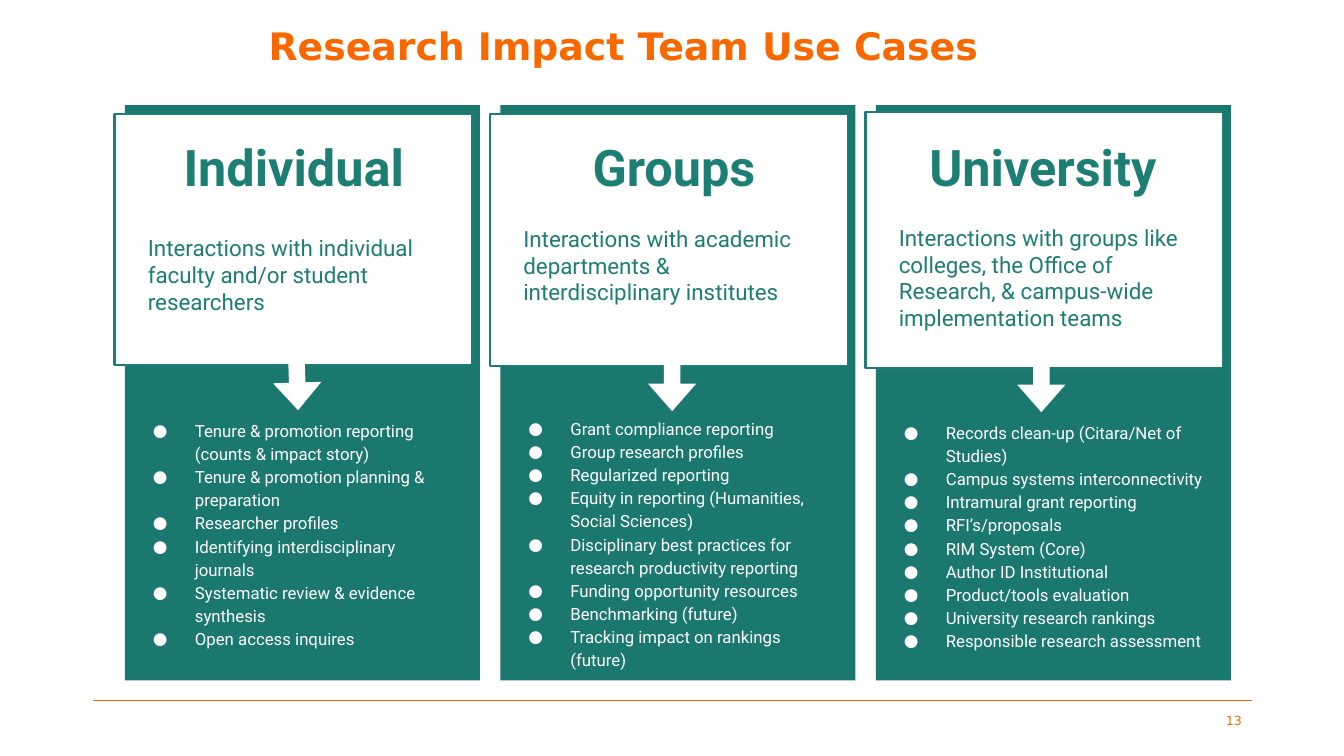
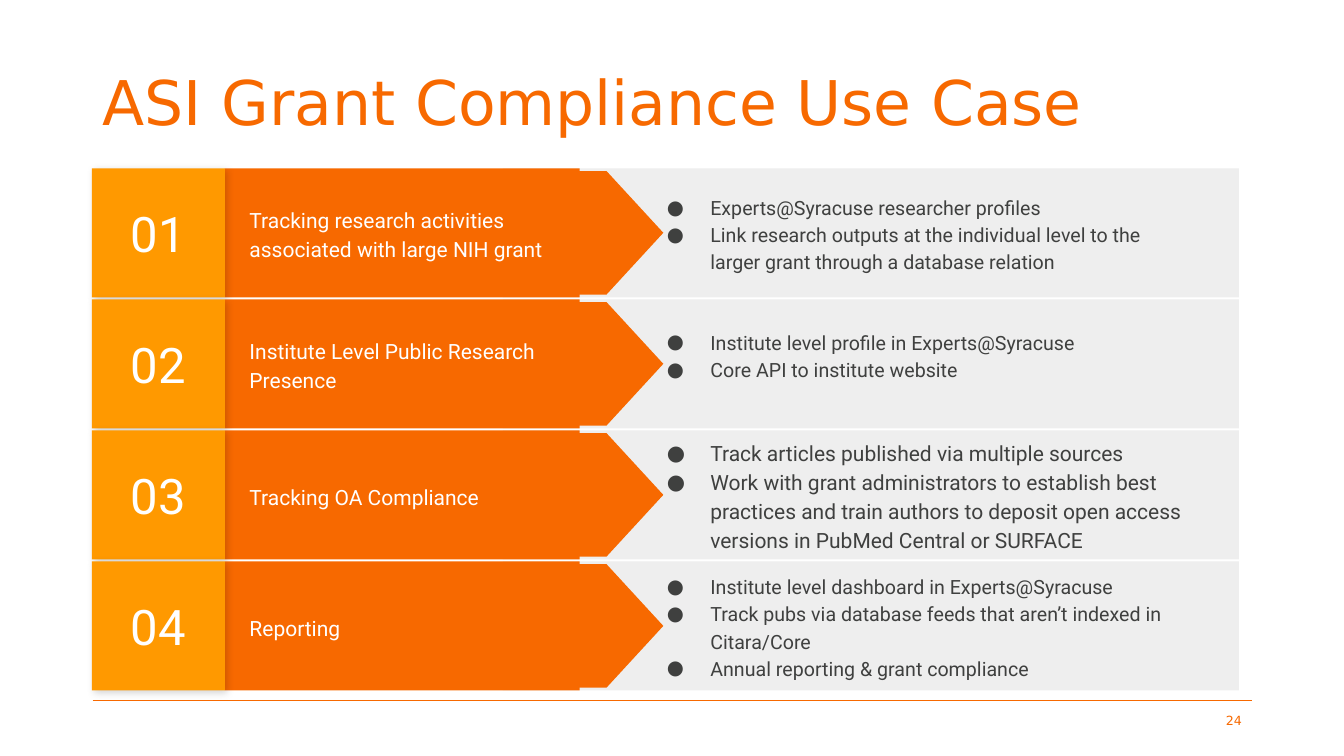
from collections import namedtuple
from dataclasses import dataclass

from lxml.etree import SubElement
from pptx import Presentation
from pptx.dml.color import RGBColor
from pptx.enum.shapes import MSO_CONNECTOR, MSO_SHAPE
from pptx.enum.text import MSO_ANCHOR, MSO_AUTO_SIZE, PP_ALIGN
from pptx.oxml.ns import qn
from pptx.util import Pt


@dataclass(frozen=True)
class Theme:
    orange: str = "F76900"
    amber: str = "FF9900"
    teal: str = "1B786E"
    edge: str = "1D7E74"
    gray: str = "EEEEEE"
    ink: str = "3F403F"
    white: str = "FFFFFF"
    head: str = "DejaVu Sans"
    body: str = "Roboto"
    small: float = 9
    list: float = 12
    item: float = 14
    label: float = 15
    blurb: float = 16
    title: float = 27
    number: float = 35
    name: float = 36
    banner: float = 44


T = Theme()
WIDE, HIGH = 960, 540
LEFT, SPAN, RULE = 66.2, 828, 500.4
EDGE = (7.2, 3.6)

Column = namedtuple("Column", "name mid blurb drop top tall tip tipy turn start items")
COLUMNS = [
    Column("Individual", 120.6,
           "Interactions with individual faculty and/or student researchers",
           157.7, 81.4, 179.2, 123, 273.6, -1.8, 288.7,
           ["Tenure & promotion reporting (counts & impact story)",
            "Tenure & promotion planning & preparation",
            "Researcher profiles",
            "Identifying interdisciplinary journals",
            "Systematic review & evidence synthesis",
            "Open access inquires"]),
    Column("Groups", 124,
           "Interactions with academic departments & interdisciplinary institutes",
           151.2, 81.4, 180, 122.6, 274.3, 0, 287.3,
           ["Grant compliance reporting",
            "Group research profiles",
            "Regularized reporting",
            "Equity in reporting (Humanities, Social Sciences)",
            "Disciplinary best practices for research productivity reporting",
            "Funding opportunity resources",
            "Benchmarking (future)",
            "Tracking impact on rankings (future)"]),
    Column("University", 119.2,
           "Interactions with groups like colleges, the Office of Research, "
           "& campus-wide implementation teams",
           150.5, 80, 182.9, 118.1, 275, 0, 290.2,
           ["Records clean-up (Citara/Net of Studies)",
            "Campus systems interconnectivity",
            "Intramural grant reporting",
            "RFI’s/proposals",
            "RIM System (Core)",
            "Author ID Institutional",
            "Product/tools evaluation",
            "University research rankings",
            "Responsible research assessment"]),
]

Row = namedtuple("Row", "label items size lift", defaults=(T.item, 0))
ROWS = [
    Row("Tracking research activities associated with large NIH grant",
        ["Experts@Syracuse researcher profiles",
         "Link research outputs at the individual level to the larger grant "
         "through a database relation"]),
    Row("Institute Level Public Research Presence",
        ["Institute level profile in Experts@Syracuse",
         "Core API to institute website"], lift=7),
    Row("Tracking OA Compliance",
        ["Track articles published via multiple sources",
         "Work with grant administrators to establish best practices and train "
         "authors to deposit open access versions in PubMed Central or SURFACE"],
        size=T.label),
    Row("Reporting",
        ["Institute level dashboard in Experts@Syracuse",
         "Track pubs via database feeds that aren’t indexed in Citara/Core",
         "Annual reporting & grant compliance"]),
]


def color(code):
    return RGBColor.from_string(code)


def bullet(para, tint, hang):
    props = para._p.get_or_add_pPr()
    props.set("marL", str(Pt(48)))
    props.set("indent", str(Pt(-hang)))
    paint = SubElement(props, qn("a:buClr"))
    SubElement(paint, qn("a:srgbClr"), val=tint)
    SubElement(props, qn("a:buFont"), typeface=T.body)
    SubElement(props, qn("a:buChar"), char="●")


def write(shape, *lines, size, tint, font=T.body, bold=False, align=PP_ALIGN.LEFT,
          anchor=MSO_ANCHOR.TOP, gap=1.0, pad=(9.4, 9.4), hang=0):
    frame = shape.text_frame
    frame.word_wrap = True
    frame.auto_size = MSO_AUTO_SIZE.NONE
    frame.vertical_anchor = anchor
    frame.margin_left = frame.margin_right = Pt(pad[0])
    frame.margin_top = frame.margin_bottom = Pt(pad[1])
    for spot, line in enumerate(lines):
        para = frame.add_paragraph() if spot else frame.paragraphs[0]
        if hang:
            bullet(para, tint, hang)
        para.alignment = align
        para.line_spacing = gap
        para.space_before = Pt(0)
        run = para.add_run()
        run.text = line
        run.font.name = font
        run.font.size = Pt(size)
        run.font.bold = bold
        run.font.color.rgb = color(tint)


def place(shape, x, y, wide, high):
    shape.left, shape.top, shape.width, shape.height = Pt(x), Pt(y), Pt(wide), Pt(high)
    return shape


def front(shape):
    shape.element.getparent().append(shape.element)
    return shape


def block(slide, x, y, wide, high, fill, kind=MSO_SHAPE.RECTANGLE, edge=None):
    shape = slide.shapes.add_shape(kind, Pt(x), Pt(y), Pt(wide), Pt(high))
    shape.shadow.inherit = False
    shape.fill.solid()
    shape.fill.fore_color.rgb = color(fill)
    if edge:
        shape.line.color.rgb = color(edge)
        shape.line.width = Pt(1.5)
    else:
        shape.line.fill.background()
    return shape


def label(slide, x, y, wide, high, text, **style):
    box = slide.shapes.add_textbox(Pt(x), Pt(y), Pt(wide), Pt(high))
    write(box, text, **style)


def shade(shape):
    effects = shape.element.spPr.find(qn("a:effectLst"))
    outer = SubElement(effects, qn("a:outerShdw"), blurRad=str(Pt(5.6)),
                       dist=str(Pt(2.2)), dir="2700000", algn="tl", rotWithShape="0")
    black = SubElement(outer, qn("a:srgbClr"), val="000000")
    SubElement(black, qn("a:alpha"), val="17000")


def rule(slide):
    line = slide.shapes.add_connector(MSO_CONNECTOR.STRAIGHT, Pt(LEFT), Pt(RULE),
                                      Pt(LEFT + SPAN), Pt(RULE))
    line.line.color.rgb = color(T.orange)
    line.line.width = Pt(0.75)
    SubElement(line.element.spPr, qn("a:effectLst"))


def start(deck, title, number, count, box, **style):
    slide = deck.slides.add_slide(deck.slide_layouts.get_by_name("Comparison"))
    write(place(slide.shapes.title, *box), title, tint=T.orange, font=T.head,
          anchor=MSO_ANCHOR.MIDDLE, gap=0.9, pad=EDGE, **style)
    rule(slide)
    label(slide, LEFT + SPAN - 216, RULE, 216, 28.8, number, size=T.small,
          tint=T.orange, font=T.head, align=PP_ALIGN.RIGHT,
          anchor=MSO_ANCHOR.MIDDLE, pad=EDGE)
    lists = [hold for hold in slide.placeholders if hold.placeholder_format.idx]
    for spare in lists[count:]:
        spare.element.getparent().remove(spare.element)
    return slide, lists[:count]


def column(slide, hold, x, data):
    block(slide, x, 75, 253.6, 411, T.teal)
    card = x - 7.5
    block(slide, card, data.top, 255.6, data.tall, T.white, edge=T.edge)
    label(slide, card + 14.4, data.drop, 226.8, 83, data.blurb,
          size=T.blurb, tint=T.edge)
    label(slide, x + data.mid - 113.4, 87.8, 226.8, 68, data.name, size=T.name,
          tint=T.edge, bold=True, align=PP_ALIGN.CENTER)
    arrow = block(slide, x + data.tip - 17.3, data.tipy - 19.4, 34.6, 38.8, T.white,
                  MSO_SHAPE.DOWN_ARROW)
    arrow.adjustments[0], arrow.adjustments[1] = 0.34, 0.57
    arrow.rotation = data.turn
    write(front(place(hold, card, data.start, 253.6, 197)), *data.items,
          size=T.list, tint=T.white, gap=1.15, hang=30)


def row(slide, hold, y, number, data):
    high = 92.2
    block(slide, 359.3, y, 525.6, high, T.gray)
    block(slide, 160.6, y, 253.4, high, T.orange)
    point = block(slide, 330, y + 2, 143.8, high - 4, T.orange, MSO_SHAPE.PENTAGON)
    point.adjustments[0] = 0.46
    label(slide, 168.8, y + 10.8, 267, 70.6, data.label, size=T.label, tint=T.white,
          anchor=MSO_ANCHOR.MIDDLE, gap=1.15)
    tile = block(slide, 65.6, y, 95, high, T.amber)
    shade(tile)
    write(tile, f"{number:02}", size=T.number, tint=T.white, align=PP_ALIGN.CENTER,
          anchor=MSO_ANCHOR.MIDDLE)
    write(front(place(hold, 450, y - data.lift, 409, high)), *data.items,
          size=data.size, tint=T.ink, anchor=MSO_ANCHOR.MIDDLE, gap=1.15, hang=31)


def main():
    deck = Presentation()
    deck.slide_width, deck.slide_height = Pt(WIDE), Pt(HIGH)

    slide, lists = start(deck, "Research Impact Team Use Cases", "13", len(COLUMNS),
                         (LEFT, 0, 758, 69), size=T.title, bold=True,
                         align=PP_ALIGN.CENTER)
    for spot, (hold, data) in enumerate(zip(lists, COLUMNS)):
        column(slide, hold, 89.3 + spot * 268.2, data)

    slide, lists = start(deck, "ASI Grant Compliance Use Case", "24", len(ROWS),
                         (LEFT, 23, SPAN, 104.4), size=T.banner)
    for spot, (hold, data) in enumerate(zip(lists, ROWS)):
        row(slide, hold, 120.2 + spot * 93.6, spot + 1, data)

    deck.save("out.pptx")


if __name__ == "__main__":
    main()
